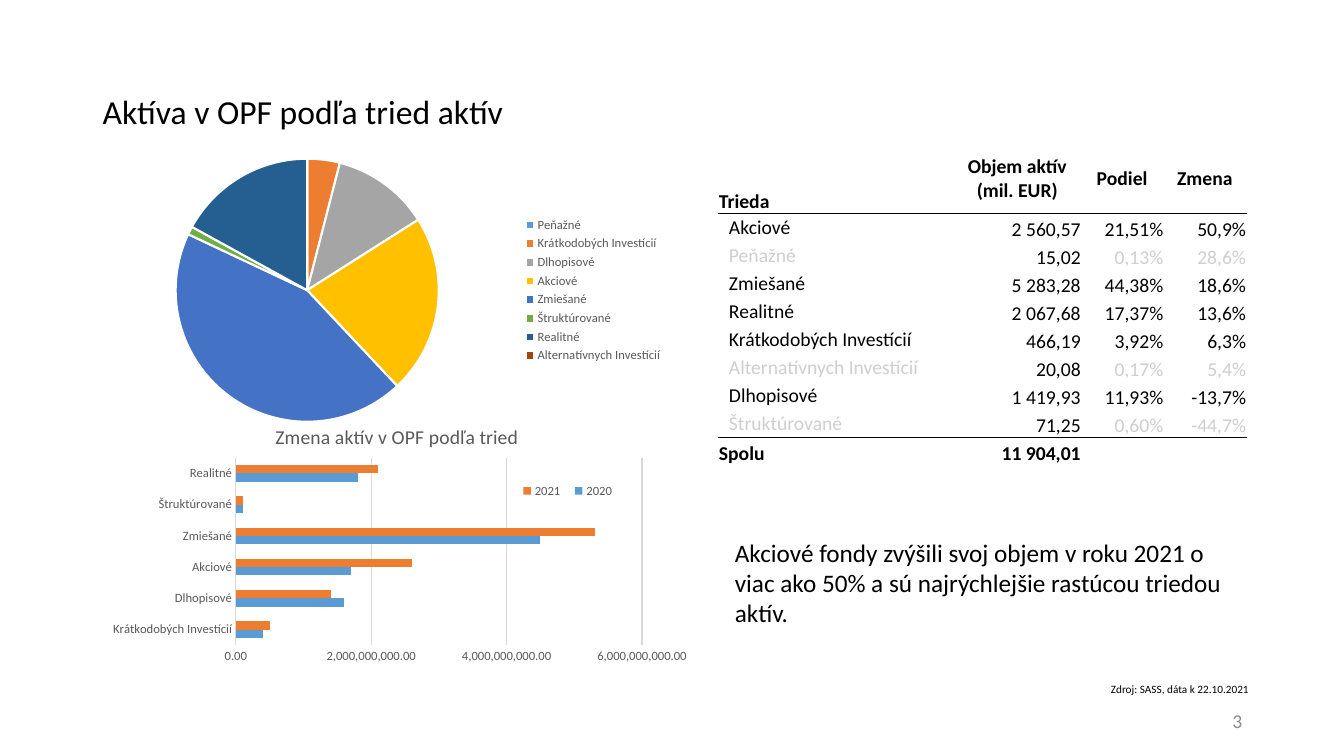
from dataclasses import dataclass

import lxml.etree
import pptx
import pptx.chart.data
import pptx.dml.color
import pptx.enum.chart
import pptx.enum.text
import pptx.oxml
import pptx.oxml.ns
import pptx.util
from pptx.util import Inches, Pt

ALIGN = pptx.enum.text.PP_ALIGN
ANCHOR = pptx.enum.text.MSO_ANCHOR
CHART = pptx.enum.chart


@dataclass(frozen=True)
class Theme:
    font: str = "Calibri"
    black: str = "000000"
    white: str = "FFFFFF"
    muted: str = "D0CECE"
    page: str = "8C8C8C"
    label: str = "595959"
    grid: str = "D9D9D9"
    accents: tuple = ("5B9BD5", "ED7D31", "A5A5A5", "FFC000",
                      "4472C4", "70AD47", "255E91", "9E480E")
    title: int = 24
    body: int = 18
    table: int = 14
    chart: int = 9
    source: int = 8


THEME = Theme()

# Class, volume in mil. EUR, share, change
FUNDS = [
    ("Akciové", "2 560,57", "21,51%", "50,9%"),
    ("Peňažné", "15,02", "0,13%", "28,6%"),
    ("Zmiešané", "5 283,28", "44,38%", "18,6%"),
    ("Realitné", "2 067,68", "17,37%", "13,6%"),
    ("Krátkodobých Investícií", "466,19", "3,92%", "6,3%"),
    ("Alternatívnych Investícií", "20,08", "0,17%", "5,4%"),
    ("Dlhopisové", "1 419,93", "11,93%", "-13,7%"),
    ("Štruktúrované", "71,25", "0,60%", "-44,7%"),
]
MINOR_FUNDS = {"Peňažné", "Alternatívnych Investícií", "Štruktúrované"}
HEADINGS = ("Trieda", "Objem aktív (mil. EUR)", "Podiel", "Zmena")
TOTAL = ("Spolu", "11 904,01", "", "")
PIE_ORDER = ("Peňažné", "Krátkodobých Investícií", "Dlhopisové", "Akciové",
             "Zmiešané", "Štruktúrované", "Realitné", "Alternatívnych Investícií")
BAR_ORDER = PIE_ORDER[1:7]


def number(text):
    """Read a number written with a decimal comma."""
    return float(text.rstrip("%").replace(" ", "").replace(",", "."))


def hundred_millions(millions):
    """Turn millions into units, rounded to whole hundreds of millions."""
    return round(millions / 100) * 10**8


def rgb(color):
    return pptx.dml.color.RGBColor.from_string(color)


def style_font(font, size, color, bold=False):
    font.name, font.size, font.bold = THEME.font, Pt(size), bold
    font.color.rgb = rgb(color)


def add_text(slide, box, text, size, color=THEME.black, align=ALIGN.LEFT,
             anchor=ANCHOR.TOP, wrap=True, spacing=1.0):
    frame = slide.shapes.add_textbox(*map(Inches, box)).text_frame
    frame.word_wrap, frame.vertical_anchor = wrap, anchor
    paragraph = frame.paragraphs[0]
    paragraph.text, paragraph.alignment = text, align
    paragraph.line_spacing = spacing
    style_font(paragraph.font, size, color)


def place(part, index, x, y, w=None, h=None, inner=False):
    """Give a chart part a fixed place, in fractions of the chart."""
    for old in part.findall(pptx.oxml.ns.qn("c:layout")):
        part.remove(old)
    layout = lxml.etree.Element(pptx.oxml.ns.qn("c:layout"))
    manual = lxml.etree.SubElement(layout, pptx.oxml.ns.qn("c:manualLayout"))
    settings = [("layoutTarget", "inner")] if inner else []
    settings += [("xMode", "edge"), ("yMode", "edge"), ("x", x), ("y", y)]
    settings += [] if w is None else [("w", w), ("h", h)]
    for tag, value in settings:
        lxml.etree.SubElement(manual, pptx.oxml.ns.qn("c:" + tag)).set("val", str(value))
    part.insert(index, layout)


def add_chart(slide, kind, box, categories, series, legend_position):
    data = pptx.chart.data.CategoryChartData()
    data.categories = categories
    for name, values in series:
        data.add_series(name, values)
    chart = slide.shapes.add_chart(kind, *map(Inches, box), data).chart
    style_font(chart.font, THEME.chart, THEME.label)
    chart.has_title = False
    chart.has_legend = True
    chart.legend.position = legend_position
    chart.legend.include_in_layout = False
    style_font(chart.legend.font, THEME.chart, THEME.label)
    return chart


def add_share_pie(slide):
    shares = {fund: round(number(share)) for fund, _, share, _ in FUNDS}
    pie = add_chart(slide, CHART.XL_CHART_TYPE.PIE, (0.92, 1.43, 5.75, 2.9), PIE_ORDER,
                    [("Series 1", [shares[fund] for fund in PIE_ORDER])],
                    CHART.XL_LEGEND_POSITION.RIGHT)
    pie.plots[0].vary_by_categories = True
    for index, color in enumerate(THEME.accents):
        style = pie.plots[0].series[0].points[index].format
        style.fill.solid()
        style.fill.fore_color.rgb = rgb(color)
        style.line.color.rgb = rgb(THEME.white)
        style.line.width = Pt(1.5)
    place(pie._chartSpace.chart.plotArea, 0, 0.14, 0.05, 0.46, 0.9, inner=True)


def add_change_bars(slide):
    """Volumes in EUR; the earlier year follows from the volume and its change."""
    now = {fund: hundred_millions(number(volume)) for fund, volume, _, _ in FUNDS}
    before = {fund: hundred_millions(number(volume) / (1 + number(change) / 100))
              for fund, volume, _, change in FUNDS}
    bars = add_chart(slide, CHART.XL_CHART_TYPE.BAR_CLUSTERED, (0.92, 4.07, 6.04, 2.81),
                     BAR_ORDER,
                     [(year, [volumes[fund] for fund in BAR_ORDER])
                      for year, volumes in (("2020", before), ("2021", now))],
                     CHART.XL_LEGEND_POSITION.BOTTOM)
    plot = bars.plots[0]
    plot.vary_by_categories, plot.gap_width, plot.overlap = False, 182, 0
    for series, color in zip(plot.series, THEME.accents):
        series.format.fill.solid()
        series.format.fill.fore_color.rgb = rgb(color)
    for axis in (bars.category_axis, bars.value_axis):
        axis.major_tick_mark = axis.minor_tick_mark = CHART.XL_TICK_MARK.NONE
        style_font(axis.tick_labels.font, THEME.chart, THEME.label)
    bars.category_axis.format.line.color.rgb = rgb(THEME.grid)
    bars.category_axis.format.line.width = Pt(0.75)
    values = bars.value_axis
    values.format.line.fill.background()
    values.minimum_scale, values.maximum_scale, values.major_unit = 0, 6e9, 2e9
    values.major_gridlines.format.line.color.rgb = rgb(THEME.grid)
    values.major_gridlines.format.line.width = Pt(0.75)
    values.tick_labels.number_format = "#,##0.00"
    values.tick_labels.number_format_is_linked = False

    heading = bars.chart_title.text_frame.paragraphs[0]
    heading.text = "Zmena aktív v OPF podľa tried"
    style_font(heading.font, THEME.table, THEME.label)
    place(bars.chart_title._element, 1, 0.294, 0.035)
    place(bars.legend._element, 1, 0.69, 0.24, 0.18, 0.09)
    place(bars._chartSpace.chart.plotArea, 0, 0.235, 0.168, 0.667, 0.662, inner=True)


def add_rule(cell, edge):
    """Draw a line on the top ("T") or bottom ("B") edge of a cell."""
    cell._tc.get_or_add_tcPr().insert(0, pptx.oxml.parse_xml(
        f'<a:ln{edge} {pptx.oxml.ns.nsdecls("a")} w="{Pt(1)}"><a:solidFill>'
        f'<a:srgbClr val="{THEME.black}"/></a:solidFill></a:ln{edge}>'))


def add_fund_table(slide):
    rows = [HEADINGS, *FUNDS, TOTAL]
    table = slide.shapes.add_table(len(rows), len(HEADINGS), Inches(7.13), Inches(1.43),
                                   Inches(5.23), Inches(3.19)).table
    table.first_row = table.horz_banding = False
    for column, width in zip(table.columns, (2.33, 1.26, 0.82, 0.82)):
        column.width = Inches(width)
    for r, row in enumerate(rows):
        header, total = r == 0, row is TOTAL
        table.rows[r].height = Inches(0.69) if header else Inches(2.5) // (len(rows) - 1)
        for c, text in enumerate(row):
            cell = table.cell(r, c)
            is_fund_name = c == 0 and not (header or total)
            cell.margin_left = Inches(0.1 if is_fund_name else 0)
            cell.margin_right = cell.margin_top = cell.margin_bottom = 0
            centred = is_fund_name or (header and c > 0)
            cell.vertical_anchor = ANCHOR.MIDDLE if centred else ANCHOR.BOTTOM
            cell.fill.background()
            paragraph = cell.text_frame.paragraphs[0]
            paragraph.text = text
            if c > 0:
                paragraph.alignment = ALIGN.CENTER if header else ALIGN.RIGHT
            faded = row[0] in MINOR_FUNDS and c != 1
            style_font(paragraph.font, THEME.table,
                       THEME.muted if faded else THEME.black, header or total)
            if header or r == len(FUNDS):
                add_rule(cell, "B")
            if r == 1 or total:
                add_rule(cell, "T")


def main():
    deck = pptx.Presentation()
    deck.slide_width, deck.slide_height = Inches(13.33), Inches(7.5)
    slide = deck.slides.add_slide(deck.slide_layouts[6])
    add_text(slide, (0.92, 0.4, 11.5, 1.45), "Aktíva v OPF podľa tried aktív",
             THEME.title, anchor=ANCHOR.MIDDLE, spacing=0.9)
    add_text(slide, (9.42, 6.95, 3, 0.4), "3", THEME.table, THEME.page,
             ALIGN.RIGHT, ANCHOR.MIDDLE)
    add_share_pie(slide)
    add_change_bars(slide)
    add_fund_table(slide)
    add_text(slide, (10.92, 6.72, 1.62, 0.24), "Zdroj: SASS, dáta k 22.10.2021",
             THEME.source, wrap=False)
    add_text(slide, (7.19, 5.28, 5.22, 1.01),
             "Akciové fondy zvýšili svoj objem v roku 2021 o viac ako 50% "
             "a sú najrýchlejšie rastúcou triedou aktív.", THEME.body)
    deck.save("out.pptx")


if __name__ == "__main__":
    main()
